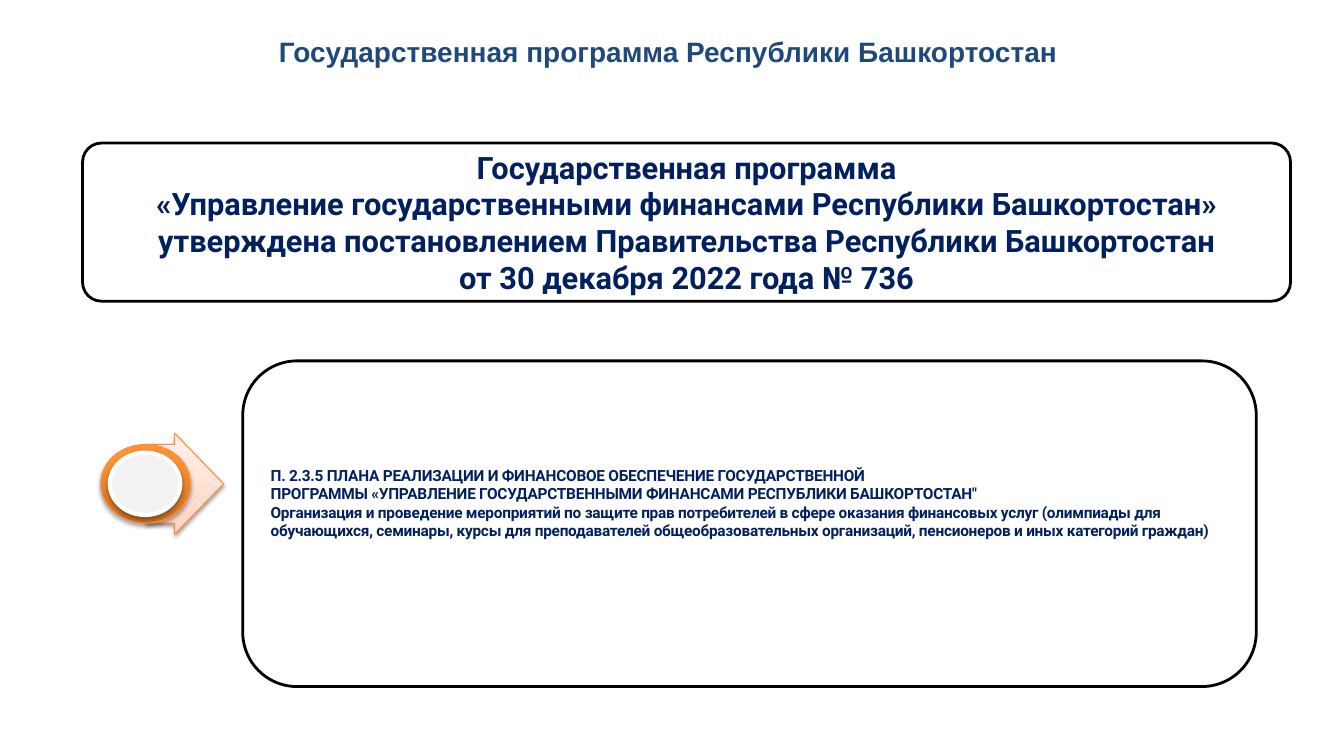
from dataclasses import dataclass
from typing import Any, Optional

from pptx import Presentation
from pptx import util as u
from pptx.dml.color import RGBColor
from pptx.enum import shapes, text
from pptx.oxml import ns, parse_xml

Pt = u.Pt
NAVY = "002060"
ORANGE = "F69240"


@dataclass
class Caption:
    lines: list[str]
    size: float
    font: str
    color: str
    align: Any
    anchor: Any
    insets: tuple[float, float, float, float] = (7.2, 3.6, 7.2, 3.6)
    wrap: bool = True
    spacing: float = 0  # letter spacing in points


@dataclass
class Part:
    kind: Any
    box: tuple[float, float, float, float]
    line: str
    line_width: float
    fill: str = "FFFFFF"
    adjust: tuple[float, ...] = ()
    gradient: tuple[tuple[int, str], ...] = ()
    shadow: Optional[tuple[int, float]] = None  # opacity in percent, distance
    caption: Optional[Caption] = None


def rgb(value: str) -> RGBColor:
    return RGBColor.from_string(value)


def write(tf: Any, cap: Caption) -> None:
    tf.word_wrap = cap.wrap
    tf.vertical_anchor = cap.anchor
    tf.margin_left, tf.margin_top, tf.margin_right, tf.margin_bottom = map(Pt, cap.insets)
    for i, line in enumerate(cap.lines):
        p = tf.add_paragraph() if i else tf.paragraphs[0]
        p.alignment = cap.align
        for j, piece in enumerate(line.split("\n")):
            if j:
                p.add_line_break()
            r = p.add_run()
            r.text = piece
            r.font.size, r.font.name, r.font.bold = Pt(cap.size), cap.font, True
            r.font.color.rgb = rgb(cap.color)
            if cap.spacing:
                r.font._element.set("spc", str(round(cap.spacing * 100)))


def fill_gradient(sp: Any, stops: tuple[tuple[int, str], ...]) -> None:
    gs = "".join(f'<a:gs pos="{pos * 1000}"><a:srgbClr val="{c}"/></a:gs>' for pos, c in stops)
    grad = parse_xml(f'<a:gradFill {ns.nsdecls("a")} rotWithShape="1"><a:gsLst>{gs}</a:gsLst>'
                     '<a:lin ang="16200000" scaled="0"/></a:gradFill>')
    sp._element.spPr.find(ns.qn("a:prstGeom")).addnext(grad)


def add_shadow(sp: Any, opacity: int, distance: float) -> None:
    effects = sp._element.spPr.find(ns.qn("a:effectLst"))
    effects.append(parse_xml(
        f'<a:outerShdw {ns.nsdecls("a")} blurRad="{Pt(3.1)}" dist="{Pt(distance)}" dir="5400000" '
        f'rotWithShape="0"><a:srgbClr val="000000"><a:alpha val="{opacity * 1000}"/>'
        '</a:srgbClr></a:outerShdw>'))


def draw(target: Any, part: Part) -> None:
    sp = target.add_shape(part.kind, *map(Pt, part.box))
    for i, value in enumerate(part.adjust):
        sp.adjustments[i] = value
    if part.gradient:
        fill_gradient(sp, part.gradient)
    else:
        sp.fill.solid()
        sp.fill.fore_color.rgb = rgb(part.fill)
    sp.line.color.rgb = rgb(part.line)
    sp.line.width = Pt(part.line_width)
    sp.shadow.inherit = False
    if part.shadow:
        add_shadow(sp, *part.shadow)
    if part.caption:
        write(sp.text_frame, part.caption)


SHAPE, ALIGN, ANCHOR = shapes.MSO_SHAPE, text.PP_ALIGN, text.MSO_ANCHOR

TITLE = Caption(["Государственная программа Республики Башкортостан"],
                20, "Arial", "1F497D", ALIGN.CENTER, ANCHOR.TOP)

PANELS = [
    Part(SHAPE.ROUNDED_RECTANGLE, (59, 102.2, 863.3, 113), "000000", 2, adjust=(0.12,),
         caption=Caption([
             "Государственная программа",
             "«Управление государственными финансами Республики Башкортостан»",
             "утверждена постановлением Правительства Республики Башкортостан\n"
             "от 30 декабря 2022 года № 736",
         ], 22, "Roboto", NAVY, ALIGN.CENTER, ANCHOR.MIDDLE, wrap=False)),
    Part(SHAPE.ROUNDED_RECTANGLE, (173.5, 257.8, 724.3, 232.6), "000000", 2,
         caption=Caption([
             "П. 2.3.5 ПЛАНА РЕАЛИЗАЦИИ И ФИНАНСОВОЕ ОБЕСПЕЧЕНИЕ ГОСУДАРСТВЕННОЙ",
             "ПРОГРАММЫ «УПРАВЛЕНИЕ ГОСУДАРСТВЕННЫМИ ФИНАНСАМИ РЕСПУБЛИКИ БАШКОРТОСТАН\"",
             "Организация и проведение мероприятий по защите прав потребителей в сфере оказания "
             "финансовых услуг (олимпиады для обучающихся, семинары, курсы для преподавателей "
             "общеобразовательных организаций, пенсионеров и иных категорий граждан)",
         ], 11, "Roboto", NAVY, ALIGN.LEFT, ANCHOR.MIDDLE,
             insets=(8.6, 4.3, 8.6, 34), spacing=-0.2)),
]

POINTER = [
    Part(SHAPE.RIGHT_ARROW, (104.4, 309.6, 55.4, 72), ORANGE, 0.75, adjust=(0.78, 0.63),
         gradient=((0, "FFD2BD"), (35, "FFDED0"), (100, "FFF2ED")), shadow=(38, 1.6)),
    Part(SHAPE.FLOWCHART_CONNECTOR, (72, 317.5, 64.1, 56.2), ORANGE, 0.75,
         gradient=((0, "CC6E20"), (80, "FF9034"), (100, "FF9136")), shadow=(35, 1.8)),
    Part(SHAPE.FLOWCHART_CONNECTOR, (78.5, 323.3, 50.4, 44.6), "FFFFFF", 3,
         fill="F2F2F2", shadow=(38, 1.6)),
]


def main() -> None:
    prs = Presentation()
    prs.slide_width, prs.slide_height = Pt(960.5), Pt(540)
    s = prs.slides.add_slide(prs.slide_layouts[6])

    # Title
    title = s.shapes.add_textbox(Pt(0), Pt(20.9), Pt(955), Pt(31.7))
    write(title.text_frame, TITLE)

    # Decree and plan panels
    for panel in PANELS:
        draw(s.shapes, panel)

    # Round marker with an arrow to the plan
    group = s.shapes.add_group_shape()
    for part in POINTER:
        draw(group.shapes, part)

    prs.save("out.pptx")


if __name__ == "__main__":
    main()
